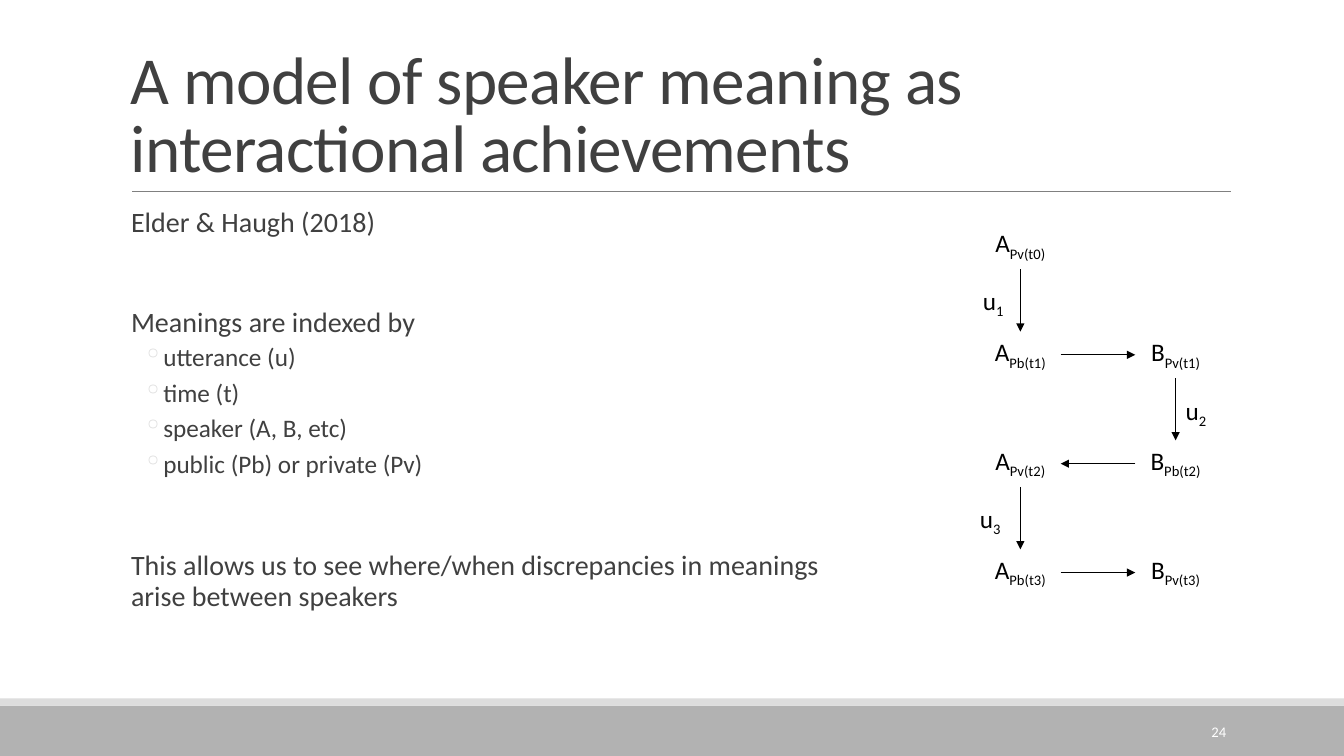
"""Build the slide on speaker meaning as an interactional achievement."""
from lxml import etree
from pptx import Presentation
from pptx.dml.color import RGBColor
from pptx.enum.shapes import MSO_CONNECTOR, MSO_SHAPE
from pptx.enum.text import MSO_ANCHOR, PP_ALIGN
from pptx.oxml.ns import qn
from pptx.util import Pt

STRAIGHT = MSO_CONNECTOR.STRAIGHT
RECTANGLE = MSO_SHAPE.RECTANGLE
TOP, MIDDLE, BOTTOM = MSO_ANCHOR.TOP, MSO_ANCHOR.MIDDLE, MSO_ANCHOR.BOTTOM
LEFT, CENTER, RIGHT = PP_ALIGN.LEFT, PP_ALIGN.CENTER, PP_ALIGN.RIGHT
SIDES = {"top": 0, "left": 1, "bottom": 2, "right": 3}

TITLE = "A model of speaker meaning as interactional achievements"
PAGE_NUMBER = "24"
BODY = [
    ("lead", "Elder & Haugh (2018)"),
    ("section", "Meanings are indexed by"),
    ("item", "utterance (u)"),
    ("item", "time (t)"),
    ("item", "speaker (A, B, etc)"),
    ("item", "public (Pb) or private (Pv)"),
    ("section", "This allows us to see where/when discrepancies in meanings "
                "arise between speakers"),
]
STATES = [
    ("A", "Pv(t0)", 0),
    ("A", "Pb(t1)", 1),
    ("B", "Pv(t1)", 1),
    ("B", "Pb(t2)", 2),
    ("A", "Pv(t2)", 2),
    ("A", "Pb(t3)", 3),
    ("B", "Pv(t3)", 3),
]
STEPS = [
    ("Pv(t0)", "bottom", "Pb(t1)", "top"),
    ("Pb(t1)", "right", "Pv(t1)", "left"),
    ("Pv(t1)", "bottom", "Pb(t2)", "top"),
    ("Pb(t2)", "left", "Pv(t2)", "right"),
    ("Pv(t2)", "bottom", "Pb(t3)", "top"),
    ("Pb(t3)", "right", "Pv(t3)", "left"),
]
UTTERANCES = [("1", 965, 278), ("2", 1166, 387), ("3", 962, 494)]

THEME = {
    "font": "Calibri",
    "ink": "404040", "diagram": "000000", "rule": "808080", "bullet": "DDDDDD",
    "band": "B2B2B2", "band_edge": "DDDDDD", "page": "FFFFFF",
    "title_size": 48, "body_size": 20, "item_size": 18,
    "diagram_size": 18, "page_size": 10.5,
}
BODY_STYLES = {
    "lead": dict(size=THEME["body_size"], before=12, after=2, margin=10),
    "section": dict(size=THEME["body_size"], before=48, after=2, margin=10),
    "item": dict(size=THEME["item_size"], before=2, after=4, margin=42,
                 hang=20, bullet="◦"),
}

PX = 9144
WIDTH, HEIGHT = 1333, 750
SPEAKER_LEFT = {"A": 972, "B": 1126}
STATE_TOP, STATE_PITCH = 221, 108
STATE_WIDTH, STATE_HEIGHT = 80, 46


def px(*lengths):
    """Turn pixel lengths into EMU."""
    return [length * PX for length in lengths]


def rgb(name):
    """Look up a theme colour."""
    return RGBColor.from_string(THEME[name])


def add_frame(slide, box, anchor=TOP, side_inset=10):
    """Add a wrapping text box."""
    holder = slide.shapes.add_textbox(*px(*box))
    frame = holder.text_frame
    frame.word_wrap = True
    frame.vertical_anchor = anchor
    frame.margin_left = frame.margin_right = side_inset * PX
    frame.margin_top = frame.margin_bottom = 5 * PX
    return holder


def write(paragraph, text, *, size, color="ink", subscript="", align=LEFT,
          line=1.0, before=0, after=0, margin=0, hang=0, bullet="", tracking=0):
    """Fill one paragraph with formatted text."""
    paragraph.alignment = align
    paragraph.line_spacing = line
    paragraph.space_before, paragraph.space_after = Pt(before), Pt(after)
    properties = paragraph._p.get_or_add_pPr()
    properties.set("marL", str(margin * PX))
    properties.set("indent", str(-hang * PX))
    if bullet:
        tint = etree.SubElement(properties, qn("a:buClr"))
        etree.SubElement(tint, qn("a:srgbClr"), val=THEME["bullet"])
        etree.SubElement(properties, qn("a:buChar"), char=bullet)
    for part, baseline in ((text, 0), (subscript, -25000)):
        if part:
            run = paragraph.add_run()
            run.text = part
            run.font.name = THEME["font"]
            run.font.size = Pt(size)
            run.font.color.rgb = rgb(color)
            if baseline:
                run.font._element.set("baseline", str(baseline))
            if tracking:
                run.font._element.set("spc", str(tracking))


def add_line(slide, start, end, color, weight):
    """Add a straight line without a shadow."""
    line = slide.shapes.add_connector(STRAIGHT, *px(*start, *end))
    line.line.color.rgb = rgb(color)
    line.line.width = Pt(weight)
    etree.SubElement(line._element.spPr, qn("a:effectLst"))
    return line


def add_arrow(slide, source, source_side, target, target_side):
    """Join two states with an arrow."""
    arrow = add_line(slide, (0, 0), (0, 0), "diagram", 1)
    arrow.begin_connect(source, SIDES[source_side])
    arrow.end_connect(target, SIDES[target_side])
    etree.SubElement(arrow.line._get_or_add_ln(), qn("a:tailEnd"), type="triangle")


def add_band(slide, top, height, color):
    """Add a full-width footer band."""
    band = slide.shapes.add_shape(RECTANGLE, *px(0, top, WIDTH, height))
    band.shadow.inherit = False
    band.fill.solid()
    band.fill.fore_color.rgb = rgb(color)
    band.line.fill.background()


def add_page(slide):
    """Place the bands, rule, title, body and page number."""
    add_band(slide, 700, 50, "band")
    add_band(slide, 693, 7, "band_edge")
    add_line(slide, (131, 190), (1221, 190), "rule", 0.5)
    title = add_frame(slide, (120, 31, 1100, 159), BOTTOM).text_frame
    write(title.paragraphs[0], TITLE, size=THEME["title_size"], line=0.85, tracking=-50)
    body = add_frame(slide, (120, 202, 746, 486), side_inset=0).text_frame
    for index, (style, text) in enumerate(BODY):
        paragraph = body.add_paragraph() if index else body.paragraphs[0]
        write(paragraph, text, line=0.9, **BODY_STYLES[style])
    number = add_frame(slide, (1083, 706, 143, 40), MIDDLE).text_frame
    write(number.paragraphs[0], PAGE_NUMBER, size=THEME["page_size"],
          color="page", align=RIGHT)


def add_diagram(slide):
    """Place the speaker states, arrows and utterances."""
    label = dict(size=THEME["diagram_size"], color="diagram")
    states = {}
    for speaker, index, row in STATES:
        box = (SPEAKER_LEFT[speaker], STATE_TOP + row * STATE_PITCH,
               STATE_WIDTH, STATE_HEIGHT)
        states[index] = add_frame(slide, box)
        write(states[index].text_frame.paragraphs[0], speaker,
              subscript=index, align=CENTER, **label)
    for source, source_side, target, target_side in STEPS:
        add_arrow(slide, states[source], source_side, states[target], target_side)
    for index, left, top in UTTERANCES:
        utterance = add_frame(slide, (left, top, 48, 40)).text_frame
        write(utterance.paragraphs[0], "u", subscript=index, **label)


def main():
    """Build and save the slide."""
    deck = Presentation()
    deck.slide_width, deck.slide_height = px(WIDTH, HEIGHT)
    slide = deck.slides.add_slide(deck.slide_layouts[6])
    add_page(slide)
    add_diagram(slide)
    deck.save("out.pptx")


if __name__ == "__main__":
    main()
